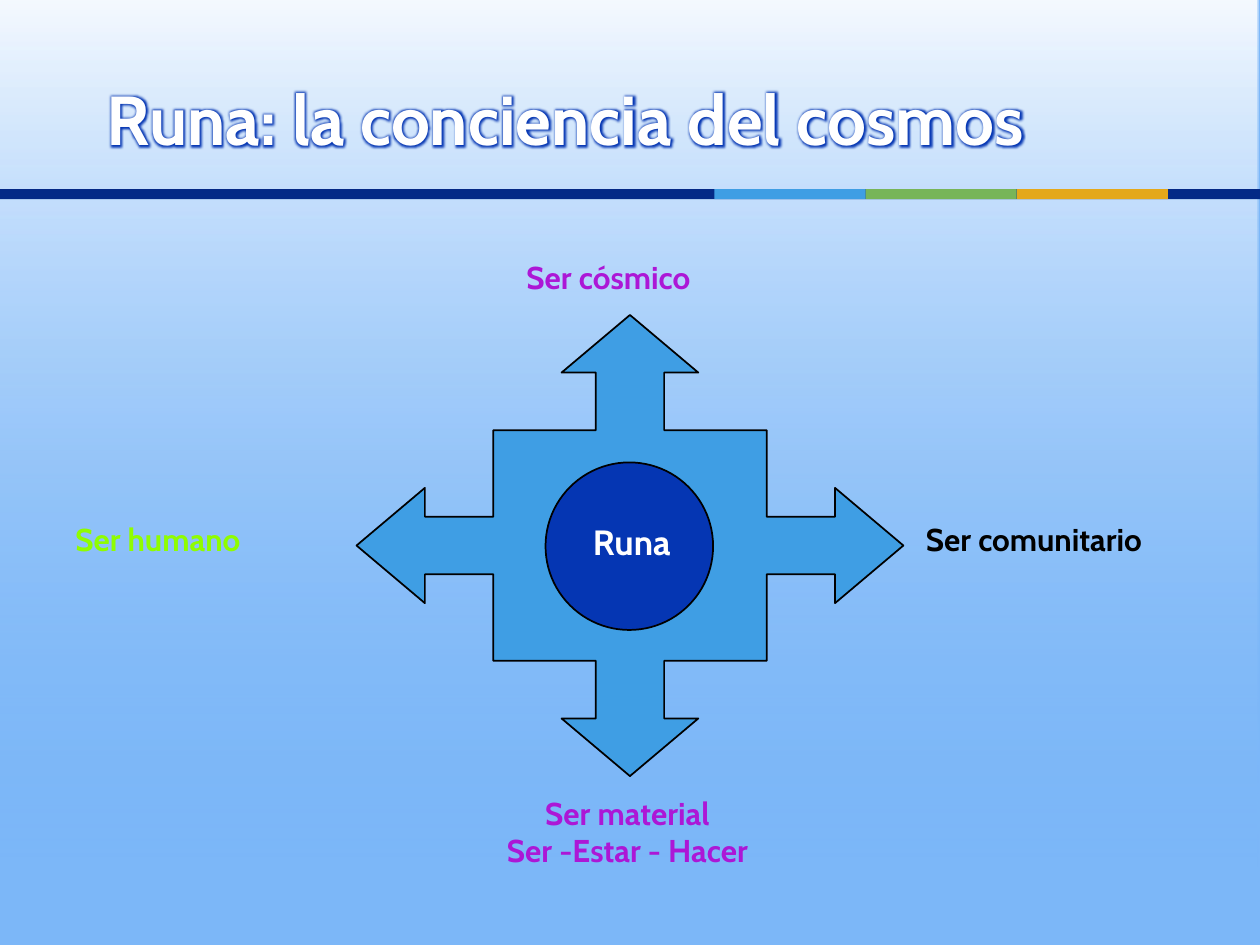
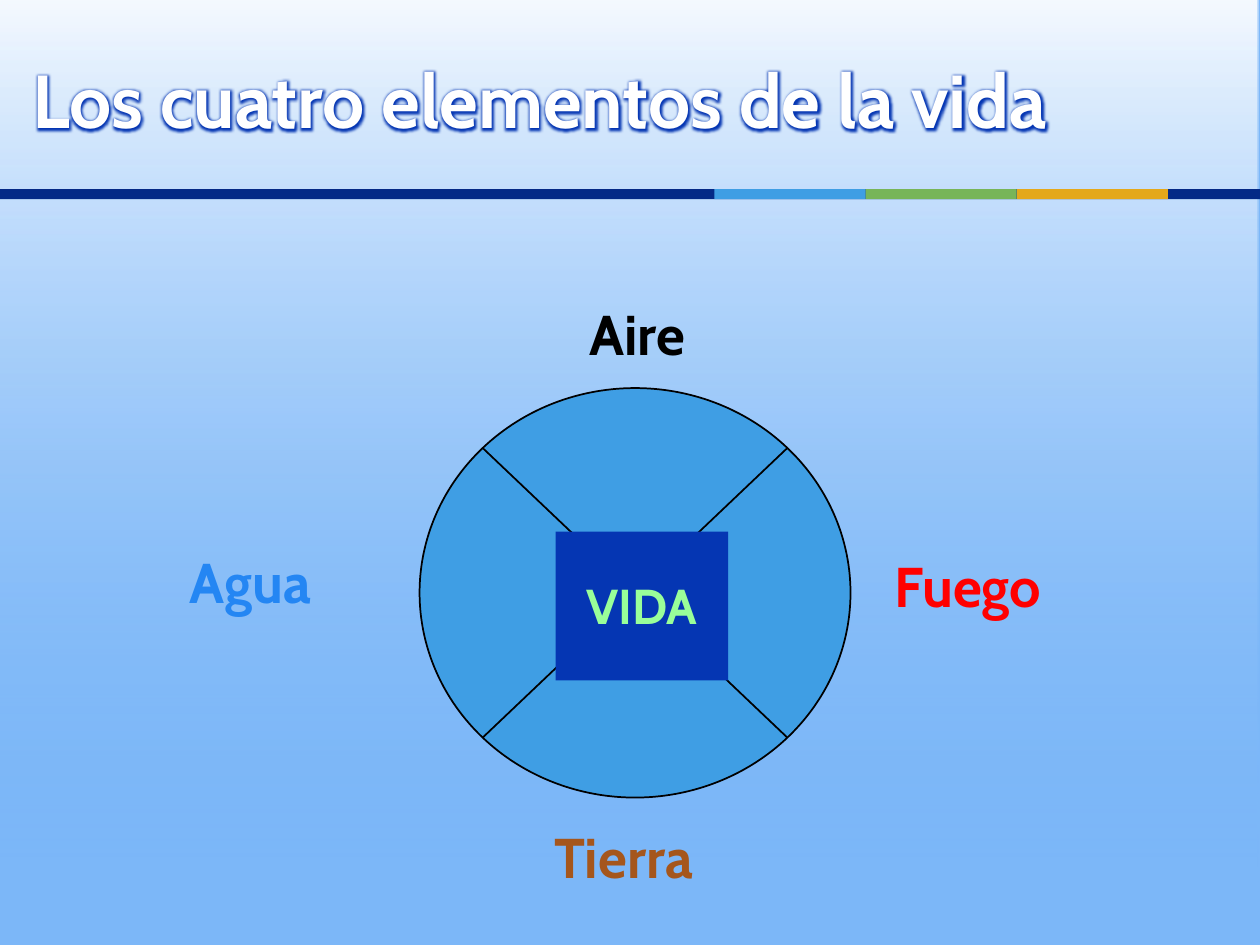
import pptx
import pptx.util
import pptx.oxml
import pptx.oxml.ns
from pptx.dml.color import RGBColor
from pptx.enum.shapes import MSO_SHAPE
from pptx.enum.text import MSO_ANCHOR, PP_ALIGN
from pptx.util import Inches

# Colours
SKY = RGBColor(0x7C, 0xB7, 0xF8)
WHITE = RGBColor(0xFF, 0xFF, 0xFF)
BLACK = RGBColor(0x00, 0x00, 0x00)
NAVY = RGBColor(0x04, 0x29, 0x86)
ROYAL = RGBColor(0x05, 0x36, 0xB3)
AZURE = RGBColor(0x3F, 0x9E, 0xE4)
GREEN = RGBColor(0x77, 0xB5, 0x59)
AMBER = RGBColor(0xE4, 0xA8, 0x1B)
PURPLE = RGBColor(0xAC, 0x17, 0xD6)
LIME = RGBColor(0x8F, 0xFD, 0x00)
RED = RGBColor(0xFF, 0x00, 0x00)
MINT = RGBColor(0x99, 0xFF, 0x99)
WATER = RGBColor(0x24, 0x86, 0xF3)
EARTH = RGBColor(0xA5, 0x56, 0x1C)

FONT = "Cabin"

# Band below the title: colour, left edge, width
BAND_TOP, BAND_HEIGHT, PIECE_WIDTH = 1.5, 0.08, 1.2
BAND = [(NAVY, 0, 10)] + [
    (color, 5.67 + index * PIECE_WIDTH, PIECE_WIDTH)
    for index, color in enumerate([AZURE, GREEN, AMBER])
]

# One arm of the four-way arrow, pointing up, in fractions of its half size
ARM = [(-1 / 2, -1 / 2), (-1 / 8, -1 / 2), (-1 / 8, -3 / 4), (-1 / 4, -3 / 4),
       (0, -1), (1 / 4, -3 / 4), (1 / 8, -3 / 4), (1 / 8, -1 / 2)]


def add_xml(parent, tag, **attributes):
    child = pptx.oxml.parse_xml(f"<a:{tag} {pptx.oxml.ns.nsdecls('a')}/>")
    for name, value in attributes.items():
        child.set(name, str(value))
    parent.append(child)
    return child


def paint(shape, fill, outlined=False):
    shape.shadow.inherit = False
    shape.fill.solid()
    shape.fill.fore_color.rgb = fill
    if outlined:
        shape.line.color.rgb = BLACK
        shape.line.width = pptx.util.Pt(1)
    else:
        shape.line.fill.background()


def add_block(page, kind, place, fill, outlined=False):
    shape = page.shapes.add_shape(kind, *map(Inches, place))
    paint(shape, fill, outlined)
    return shape


def write(shape, text, size, color, align=PP_ALIGN.LEFT, **frame_format):
    frame = shape.text_frame
    frame_format = {"word_wrap": True, "vertical_anchor": MSO_ANCHOR.TOP, **frame_format}
    for name, value in frame_format.items():
        setattr(frame, name, value)
    font_format = {"name": FONT, "size": pptx.util.Pt(size), "bold": True}
    for index, line in enumerate(text.split("\n")):
        para = frame.add_paragraph() if index else frame.paragraphs[0]
        para.alignment = align
        span = para.add_run()
        span.text = line
        span.font.color.rgb = color
        for name, value in font_format.items():
            setattr(span.font, name, value)
    return shape


def add_label(page, text, place, size, color, align=PP_ALIGN.LEFT, **frame_format):
    box = page.shapes.add_textbox(*map(Inches, place))
    return write(box, text, size, color, align, **frame_format)


def add_title(page, text, place, size):
    box = add_label(page, text, place, size, WHITE, vertical_anchor=MSO_ANCHOR.MIDDLE)
    # Blue glow, placed right after the text fill
    properties = box.text_frame.paragraphs[0].runs[0].font._element
    effects = add_xml(properties, "effectLst")
    glow = add_xml(effects, "glow", rad=Inches(0.07))
    add_xml(glow, "srgbClr", val=ROYAL)
    properties.find(pptx.oxml.ns.qn("a:solidFill")).addnext(effects)


def add_page(deck):
    page = deck.slides.add_slide(deck.slide_layouts[6])
    page.background.fill.solid()
    page.background.fill.fore_color.rgb = SKY

    # White light fading downwards
    light = add_block(page, MSO_SHAPE.RECTANGLE, (-0.01, 0, 10, 6.88), SKY)
    light.fill.gradient()
    light.fill.gradient_angle = 90
    stops = [(0.01, SKY, 0), (1, WHITE, 92)]
    for stop, (position, color, opacity) in zip(light.fill.gradient_stops, stops):
        stop.position = position
        stop.color.rgb = color
        color_node = stop._gs.find(pptx.oxml.ns.qn("a:srgbClr"))
        add_xml(color_node, "alpha", val=opacity * 1000)

    for color, left, width in BAND:
        add_block(page, MSO_SHAPE.RECTANGLE, (left, BAND_TOP, width, BAND_HEIGHT), color)
    return page


def add_four_way_arrow(page, center_x, center_y, half_width, half_height):
    points, arm = [], ARM
    for _ in range(4):
        points += arm
        arm = [(-y, x) for x, y in arm]
    corners = [(Inches(center_x + x * half_width), Inches(center_y + y * half_height))
               for x, y in points]
    builder = page.shapes.build_freeform(*corners[0])
    builder.add_line_segments(corners[1:], close=True)
    paint(builder.convert_to_shape(), AZURE, outlined=True)


def build_runa(deck):
    page = add_page(deck)
    add_title(page, "Runa: la conciencia del cosmos", (0.75, 0.31, 8.5, 1.25), 39.6)
    add_four_way_arrow(page, 5, 4.33, 2.17, 1.83)
    add_label(page, "Ser cósmico", (4.08, 2, 1.89, 0.5), 18, PURPLE)
    add_label(page, "Ser comunitario", (7.25, 4.08, 2.51, 0.5), 18, BLACK)
    add_label(page, "Ser material\nSer -Estar - Hacer", (3.58, 6.25, 2.8, 0.9),
              18, PURPLE, PP_ALIGN.CENTER)
    add_label(page, "Ser humano", (0.5, 4.08, 1.93, 0.5), 18, LIME)
    add_block(page, MSO_SHAPE.OVAL, (4.33, 3.67, 1.33, 1.33), ROYAL, outlined=True)
    add_label(page, "Runa", (4.58, 4.08, 0.87, 0.44), 20, WHITE, PP_ALIGN.CENTER)


def build_elements(deck):
    page = add_page(deck)
    add_title(page, "Los cuatro elementos de la vida", (0.16, 0.16, 9.69, 1.25), 42.9)
    add_block(page, MSO_SHAPE.FLOWCHART_SUMMING_JUNCTION, (3.33, 3.08, 3.42, 3.25),
              AZURE, outlined=True)
    core = add_block(page, MSO_SHAPE.RECTANGLE, (4.41, 4.22, 1.37, 1.18), ROYAL)
    write(core, "VIDA", 28, MINT, PP_ALIGN.CENTER, margin_top=Inches(0.35))
    elements = [
        ("Aire", 4.58, 2.33, 1.2, BLACK),
        ("Fuego", 7, 4.33, 1.52, RED),
        ("Agua", 1.41, 4.3, 1.46, WATER),
        ("Tierra", 4.3, 6.48, 1.64, EARTH),
    ]
    for name, left, top, width, color in elements:
        add_label(page, name, (left, top, width, 0.64), 32, color)


def main():
    deck = pptx.Presentation()
    deck.slide_width, deck.slide_height = Inches(10), Inches(7.5)
    build_runa(deck)
    build_elements(deck)
    deck.save("out.pptx")


if __name__ == "__main__":
    main()
